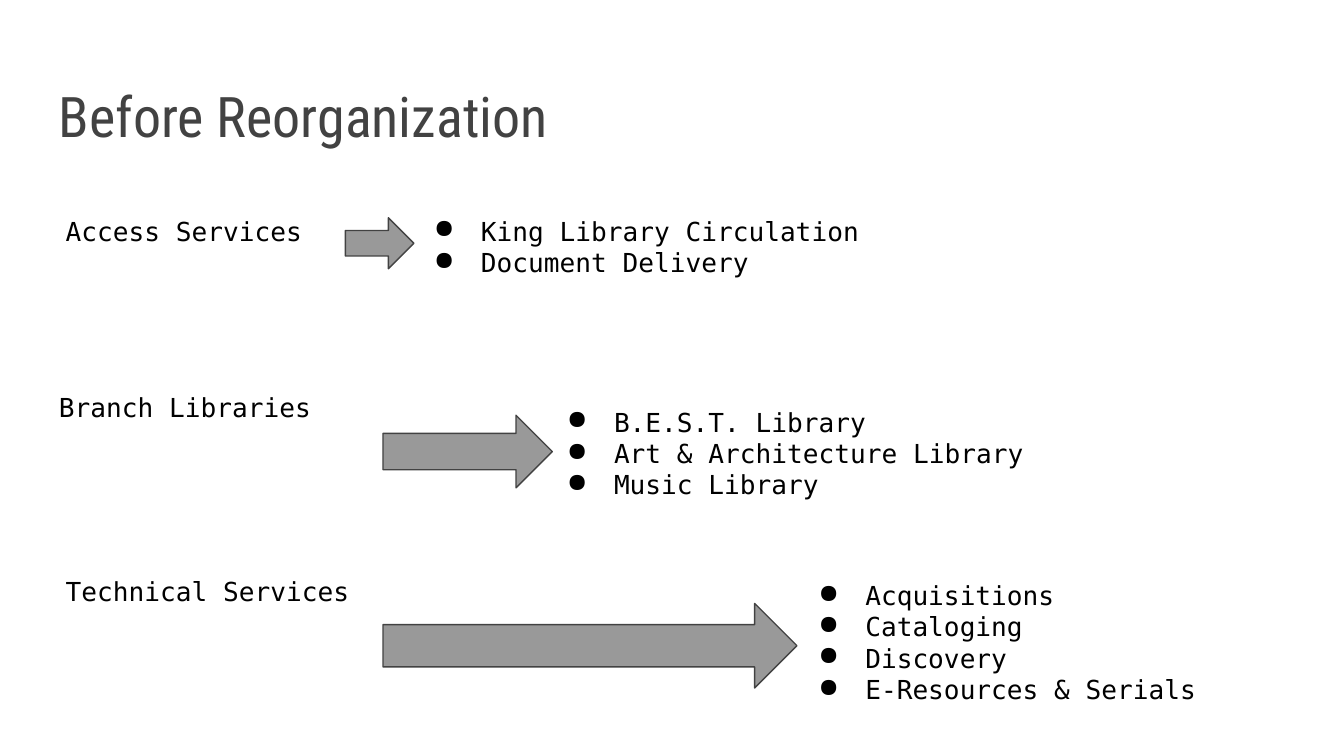
from lxml import etree
from pptx import Presentation
from pptx.dml.color import RGBColor
from pptx.enum.shapes import MSO_SHAPE
from pptx.enum.text import MSO_ANCHOR
from pptx.oxml.ns import qn
from pptx.util import Inches, Pt

RIGHT_ARROW = MSO_SHAPE.RIGHT_ARROW
TOP, BOTTOM = MSO_ANCHOR.TOP, MSO_ANCHOR.BOTTOM

BLACK, DARK_GRAY, MID_GRAY = "000000", "424242", "999999"
TITLE_FONT = {"name": "Roboto Condensed", "size": Pt(30)}
BODY_FONT = {"name": "DejaVu Sans Mono", "size": Pt(14)}
FRAME_FORMAT = {"word_wrap": True}
for side in ("left", "top", "right", "bottom"):
    FRAME_FORMAT[f"margin_{side}"] = Inches(0.1)


def color(hex_string):
    return RGBColor.from_string(hex_string)


def add_text(slide, box, lines, font, text_color, anchor=TOP, bullets=False):
    frame = slide.shapes.add_textbox(*map(Inches, box)).text_frame
    for name, value in FRAME_FORMAT.items():
        setattr(frame, name, value)
    frame.vertical_anchor = anchor
    frame.text = "\n".join(lines)
    for paragraph in frame.paragraphs:
        for name, value in font.items():
            setattr(paragraph.runs[0].font, name, value)
        paragraph.runs[0].font.color.rgb = color(text_color)
        if bullets:
            properties = paragraph._p.get_or_add_pPr()
            properties.set("marL", str(Inches(0.5)))
            properties.set("indent", str(Inches(-0.35)))
            bullet_color = etree.SubElement(properties, qn("a:buClr"))
            etree.SubElement(bullet_color, qn("a:srgbClr"), val=text_color)
            etree.SubElement(properties, qn("a:buChar"), char="●")


presentation = Presentation()
presentation.slide_width = Inches(10)
presentation.slide_height = Inches(10) * 9 // 16
slide = presentation.slides.add_slide(presentation.slide_layouts[6])

# Title
add_text(slide, (0.34, 0.41, 9.32, 0.8), ["Before Reorganization"],
         TITLE_FONT, DARK_GRAY, anchor=BOTTOM)

# Departments: name, name box, arrow box, units box, units
departments = [
    ("Access Services", (0.39, 1.5, 2.18, 0.43),
     (2.57, 1.62, 0.51, 0.38), (2.98, 1.5, 3.54, 0.72),
     ["King Library Circulation", "Document Delivery"]),
    ("Branch Libraries", (0.34, 2.81, 2.13, 0.38),
     (2.85, 3.09, 1.26, 0.54), (3.97, 2.92, 4.09, 0.9),
     ["B.E.S.T. Library", "Art & Architecture Library", "Music Library"]),
    ("Technical Services", (0.39, 4.18, 2.47, 0.54),
     (2.85, 4.49, 3.08, 0.63), (5.84, 4.21, 3.54, 1.25),
     ["Acquisitions", "Cataloging", "Discovery", "E-Resources & Serials"]),
]

for department, name_box, arrow_box, units_box, units in departments:
    add_text(slide, name_box, [department], BODY_FONT, BLACK)
    add_text(slide, units_box, units, BODY_FONT, BLACK, bullets=True)

    # Arrow from the department to its units
    arrow = slide.shapes.add_shape(RIGHT_ARROW, *map(Inches, arrow_box))
    arrow.shadow.inherit = False
    arrow.fill.solid()
    arrow.fill.fore_color.rgb = color(MID_GRAY)
    arrow.line.color.rgb = color(DARK_GRAY)
    arrow.line.width = Pt(0.75)

presentation.save("out.pptx")
